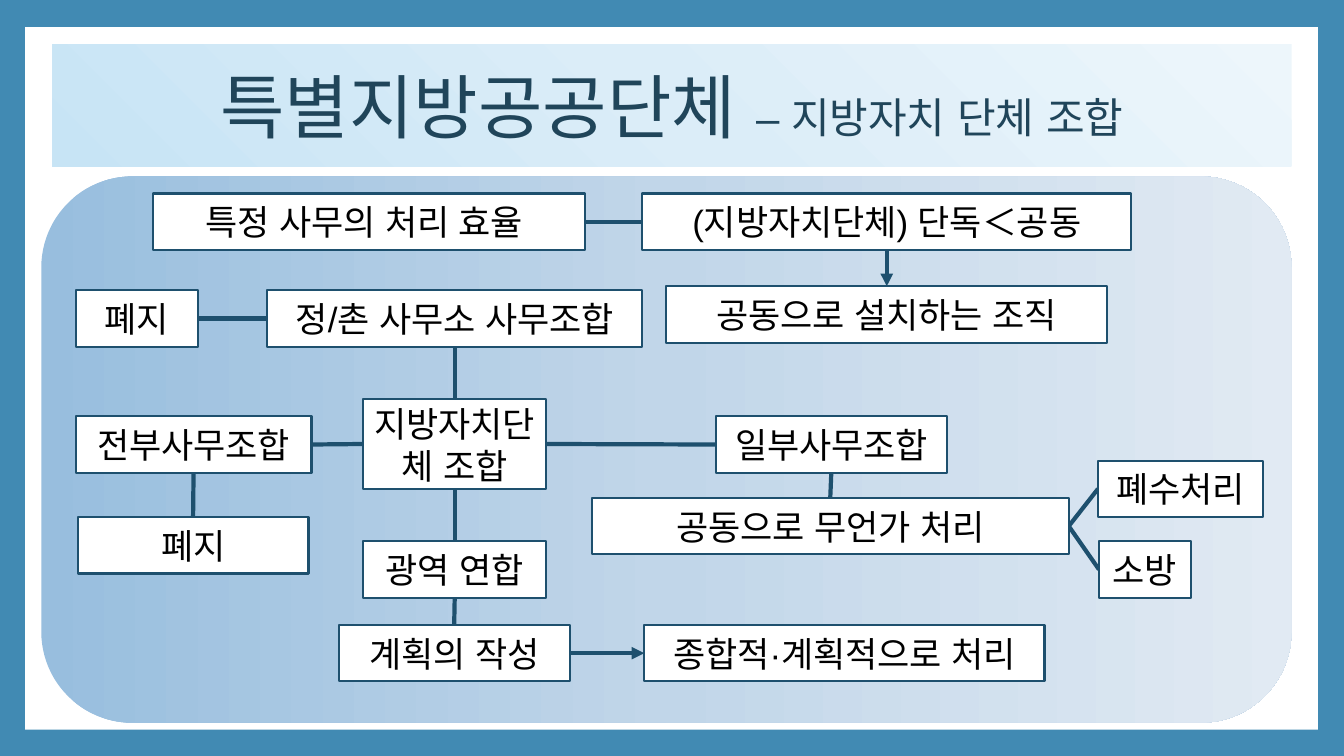
from lxml import etree
from pptx import Presentation
from pptx.dml.color import RGBColor
from pptx.enum.shapes import MSO_CONNECTOR as CONN, MSO_SHAPE as SHAPE
from pptx.enum.text import MSO_ANCHOR as ANCHOR, PP_ALIGN as ALIGN
from pptx.oxml import parse_xml
from pptx.oxml.ns import nsdecls, qn
from pptx.util import Inches, Pt

COLORS = {"frame": "418AB3", "white": "FFFFFF", "line": "1E506E",
          "title": "20455A", "text": "000000"}
PANEL_STOPS = ["98BEDE", "C1D6E9", "E1EAF3"]
TITLE_STOPS = ["C7E4F5", "DBEDF8", "EDF6FB"]
LINEAR = '<a:lin ang="0" scaled="0"/>'
FROM_CORNER = ('<a:path path="circle"><a:fillToRect t="100000" r="100000"/>'
               '</a:path>')
TOP, LEFT, BOTTOM, RIGHT = range(4)
BOX_H = 0.56

# name: (text, left, top, width, height)
BOXES = {
    "efficiency": ("특정 사무의 처리 효율 ", 1.52, 1.92, 4.28, BOX_H),
    "alone_joint": ("(지방자치단체) 단독＜공동", 6.37, 1.92, 4.85, BOX_H),
    "organization": ("공동으로 설치하는 조직", 6.61, 2.84, 4.37, BOX_H),
    "office_end": ("폐지", 0.75, 2.88, 1.21, BOX_H),
    "office": ("정/촌 사무소 사무조합", 2.65, 2.88, 3.72, BOX_H),
    "union": ("지방자치단체 조합", 3.6, 3.96, 1.82, 0.89),
    "whole": ("전부사무조합", 0.75, 4.13, 2.34, BOX_H),
    "whole_end": ("폐지", 0.77, 5.13, 2.29, BOX_H),
    "partial": ("일부사무조합", 7.1, 4.13, 2.29, BOX_H),
    "joint_work": ("공동으로 무언가 처리", 5.87, 4.94, 4.73, BOX_H),
    "sewage": ("폐수처리", 10.89, 4.57, 1.64, BOX_H),
    "fire": ("소방", 10.9, 5.37, 0.91, BOX_H),
    "wide_area": ("광역 연합", 3.6, 5.37, 1.82, BOX_H),
    "plan": ("계획의 작성", 3.36, 6.2, 2.29, BOX_H),
    "overall": ("종합적·계획적으로 처리", 6.39, 6.2, 3.97, BOX_H),
}

# from box, side, to box, side, arrow
LINKS = [
    ("alone_joint", LEFT, "efficiency", RIGHT, False),
    ("alone_joint", BOTTOM, "organization", TOP, True),
    ("office_end", RIGHT, "office", LEFT, False),
    ("union", TOP, "office", BOTTOM, False),
    ("whole", RIGHT, "union", LEFT, False),
    ("whole", BOTTOM, "whole_end", TOP, False),
    ("partial", LEFT, "union", RIGHT, False),
    ("joint_work", TOP, "partial", BOTTOM, False),
    ("sewage", LEFT, "joint_work", RIGHT, False),
    ("fire", LEFT, "joint_work", RIGHT, False),
    ("wide_area", TOP, "union", BOTTOM, False),
    ("wide_area", BOTTOM, "plan", TOP, False),
    ("plan", RIGHT, "overall", LEFT, True),
]


def rgb(name):
    return RGBColor.from_string(COLORS[name])


class Deck:
    """Holds the style and the current slide."""

    def __init__(self, slide, font="Arial"):
        self.s = slide
        self.font = font

    def background(self, color):
        fill = self.s.background.fill
        fill.solid()
        fill.fore_color.rgb = rgb(color)

    def plain(self, kind, *box):
        """Shape without shadow, fill or line."""
        sp = self.s.shapes.add_shape(kind, *map(Inches, box))
        sp.shadow.inherit = False
        sp.line.fill.background()
        return sp

    def solid(self, *box):
        sp = self.plain(SHAPE.RECTANGLE, *box)
        sp.fill.solid()
        sp.fill.fore_color.rgb = rgb("white")
        return sp

    def gradient(self, kind, stops, direction, *box):
        sp = self.plain(kind, *box)
        gs = "".join(f'<a:gs pos="{i * 50000}"><a:srgbClr val="{c}"/></a:gs>'
                     for i, c in enumerate(stops))
        fill = parse_xml(f'<a:gradFill {nsdecls("a")} rotWithShape="1">'
                         f'<a:gsLst>{gs}</a:gsLst>{direction}</a:gradFill>')
        sp._element.spPr.find(qn("a:prstGeom")).addnext(fill)
        return sp

    def label(self, sp, runs, color):
        tf = sp.text_frame
        tf.word_wrap = True
        tf.vertical_anchor = ANCHOR.MIDDLE
        p = tf.paragraphs[0]
        p.alignment = ALIGN.CENTER
        for text, size in runs:
            r = p.add_run()
            r.text = text
            r.font.name = self.font
            r.font.size = Pt(size)
            r.font.color.rgb = rgb(color)
            ea = etree.SubElement(r._r.get_or_add_rPr(), qn("a:ea"))
            ea.set("typeface", self.font)

    def box(self, text, *place):
        sp = self.solid(*place)
        sp.line.color.rgb = rgb("line")
        sp.line.width = Pt(1.5)
        self.label(sp, [(text, 25)], "text")
        return sp

    def link(self, start, start_side, end, end_side, arrow, above):
        """Join two boxes with a line stacked just above the given shape."""
        c = self.s.shapes.add_connector(CONN.STRAIGHT, 0, 0, 0, 0)
        c.begin_connect(start, start_side)
        c.end_connect(end, end_side)
        c.line.color.rgb = rgb("line")
        c.line.width = Pt(3)
        spPr = c._element.spPr
        if arrow:
            tail = etree.SubElement(spPr.find(qn("a:ln")), qn("a:tailEnd"))
            tail.set("type", "triangle")
        etree.SubElement(spPr, qn("a:effectLst"))
        above._element.addnext(c._element)


def main():
    prs = Presentation()
    prs.slide_width, prs.slide_height = Inches(13.33), Inches(7.5)
    deck = Deck(prs.slides.add_slide(prs.slide_layouts[6]))

    deck.background("frame")
    deck.solid(0.25, 0.27, 12.82, 6.97)
    deck.gradient(SHAPE.ROUNDED_RECTANGLE, PANEL_STOPS, LINEAR,
                  0.41, 1.75, 12.4, 5.42)
    title = deck.gradient(SHAPE.RECTANGLE, TITLE_STOPS, FROM_CORNER,
                          0.52, 0.44, 12.29, 1.21)
    deck.label(title, [("특별지방공공단체 ", 50), ("– 지방자치 단체 조합", 30)],
               "title")

    boxes = {name: deck.box(*row) for name, row in BOXES.items()}
    for start, start_side, end, end_side, arrow in LINKS:
        deck.link(boxes[start], start_side, boxes[end], end_side, arrow,
                  above=title)
    prs.save("out.pptx")


if __name__ == "__main__":
    main()
